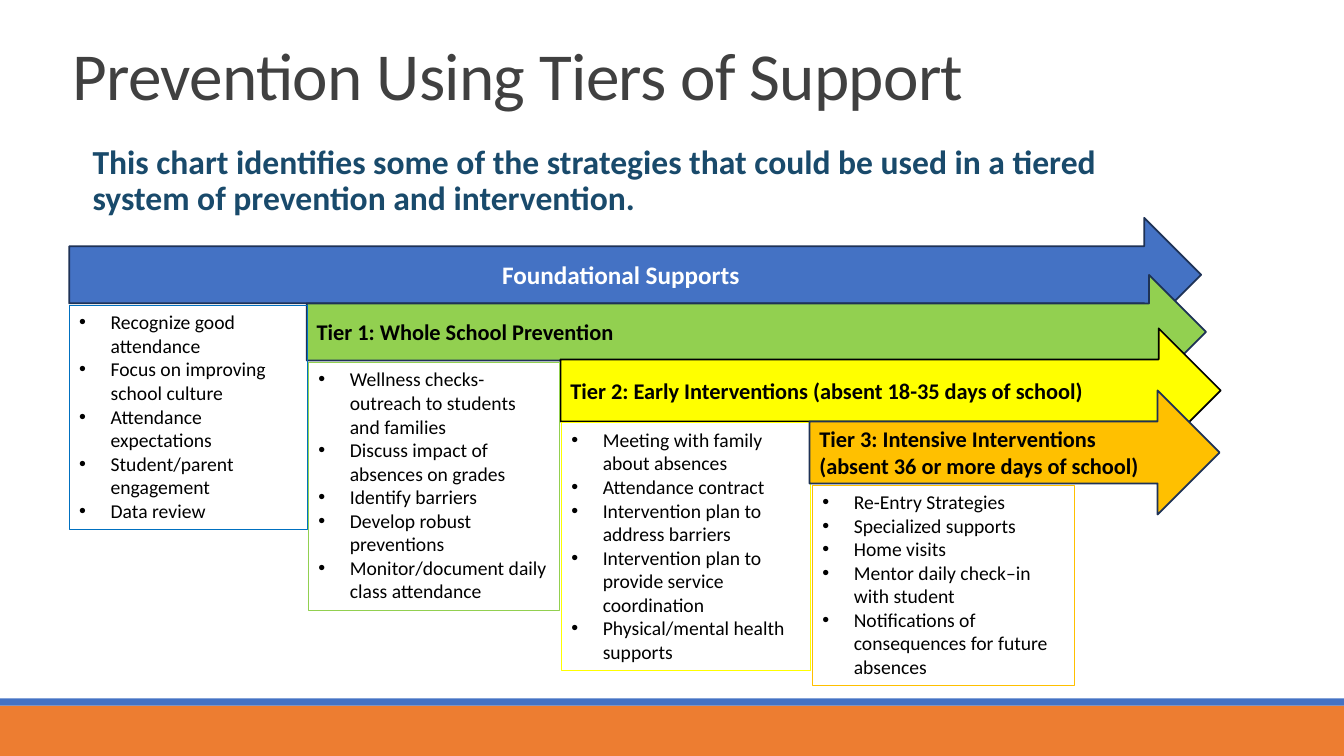
from lxml.etree import SubElement
from pptx import Presentation
from pptx.dml.color import RGBColor
from pptx.enum.shapes import MSO_SHAPE as Shape
from pptx.enum.text import MSO_ANCHOR as Anchor, MSO_AUTO_SIZE as AutoSize, PP_ALIGN as Align
from pptx.oxml.ns import qn
from pptx.util import Pt

TITLE = "Prevention Using Tiers of Support"
INTRO = ("This chart identifies some of the strategies that could be used in a tiered "
         "system of prevention and intervention.")
TIERS = [
    {"label": "Foundational Supports", "size": 18, "ink": "FFFFFF", "align": Align.CENTER,
     "fill": "4472C4", "edge": "1E3256", "border": "0070C0",
     "arrow": (49.4, 155.6, 808.6, 81.4), "box": (49.5, 218.1, 169.9, 159.9),
     "strategies": ["Recognize good attendance", "Focus on improving school culture",
                    "Attendance expectations", "Student/parent engagement", "Data review"]},
    {"label": "Tier 1: Whole School Prevention", "size": 16, "ink": "000000", "align": Align.LEFT,
     "fill": "92D050", "edge": "1E3256", "border": "92D050",
     "arrow": (219.1, 196.4, 642.4, 81.4), "box": (220.3, 258.9, 179.3, 177),
     "strategies": ["Wellness checks-outreach to students and families",
                    "Discuss impact of absences on grades", "Identify barriers",
                    "Develop robust preventions", "Monitor/document daily class attendance"]},
    {"label": "Tier 2: Early Interventions (absent 18-35 days of school)", "size": 16,
     "ink": "000000", "align": Align.LEFT,
     "fill": "FFFF00", "edge": "000000", "border": "FFFF00",
     "arrow": (400.3, 234.6, 471.6, 88.6), "box": (401, 302.1, 177.8, 177),
     "strategies": ["Meeting with family about absences", "Attendance contract",
                    "Intervention plan to address barriers",
                    "Intervention plan to provide service coordination",
                    "Physical/mental health supports"]},
    {"label": "Tier 3: Intensive Interventions\n(absent 36 or more days of school)", "size": 16,
     "ink": "000000", "align": Align.LEFT,
     "fill": "FFC000", "edge": "1E3256", "border": "FFC000",
     "arrow": (578.2, 278.9, 293, 88.6), "box": (580.3, 346.5, 187.2, 143.3),
     "strategies": ["Re-Entry Strategies", "Specialized supports", "Home visits",
                    "Mentor daily check–in with student",
                    "Notifications of consequences for future absences"]},
]
FOOTER = [((0, 504, 960, 36), "ED7D31"), ((0, 498.9, 960, 5.1), "4472C4")]
INDENT = 22.5


def color(value):
    return RGBColor.from_string(value)


def points(area):
    return [Pt(length) for length in area]


def write(frame, text, size, ink, bold=False, align=Align.LEFT, spacing=None, bullets=False):
    frame.word_wrap = True
    frame.text = text
    for paragraph in frame.paragraphs:
        paragraph.alignment = align
        if spacing:
            paragraph.line_spacing = spacing
        if bullets:
            properties = paragraph._p.get_or_add_pPr()
            properties.set("marL", str(Pt(INDENT)))
            properties.set("indent", str(-Pt(INDENT)))
            SubElement(properties, qn("a:buFont")).set("typeface", "Arial")
            SubElement(properties, qn("a:buChar")).set("char", "•")
        for run in paragraph.runs:
            run.font.name = "Calibri"
            run.font.size = Pt(size)
            run.font.bold = bold
            run.font.color.rgb = color(ink)


def add_block(slide, kind, area, fill=None, line=None, width=0):
    block = slide.shapes.add_shape(kind, *points(area))
    block.shadow.inherit = False
    if fill:
        block.fill.solid()
        block.fill.fore_color.rgb = color(fill)
    else:
        block.fill.background()
    if line:
        block.line.color.rgb = color(line)
        block.line.width = Pt(width)
    else:
        block.line.fill.background()
    return block


def add_tier_arrow(slide, tier):
    arrow = add_block(slide, Shape.RIGHT_ARROW, tier["arrow"], tier["fill"], tier["edge"], 1.25)
    arrow.text_frame.vertical_anchor = Anchor.MIDDLE
    write(arrow.text_frame, tier["label"], tier["size"], tier["ink"], True, tier["align"])


def add_strategies(slide, tier):
    box = add_block(slide, Shape.RECTANGLE, tier["box"], line=tier["border"], width=0.75)
    box.text_frame.vertical_anchor = Anchor.TOP
    write(box.text_frame, "\n".join(tier["strategies"]), 14, "000000", bullets=True)
    box.text_frame.auto_size = AutoSize.SHAPE_TO_FIT_TEXT


def main():
    deck = Presentation()
    deck.slide_width, deck.slide_height = Pt(960), Pt(540)
    slide = deck.slides.add_slide(deck.slide_layouts[5])

    for area, fill in FOOTER:
        add_block(slide, Shape.RECTANGLE, area, fill)

    title = slide.shapes.title
    title.left, title.top, title.width, title.height = points((44.6, 33.1, 785.5, 51.8))
    write(title.text_frame, TITLE, 48, "404040", spacing=0.85)
    title.text_frame.vertical_anchor = Anchor.BOTTOM
    title.text_frame.auto_size = AutoSize.NONE
    title.text_frame.paragraphs[0].runs[0].font._element.set("spc", "-50")

    *wide_tiers, last_tier = TIERS
    for tier in wide_tiers:
        add_tier_arrow(slide, tier)
    for tier in TIERS:
        add_strategies(slide, tier)
    add_tier_arrow(slide, last_tier)

    intro = slide.shapes.add_textbox(*points((59, 103.7, 785.5, 51.8)))
    intro.text_frame.vertical_anchor = Anchor.MIDDLE
    write(intro.text_frame, INTRO, 24, "194A6B", True, spacing=0.9)

    deck.save("out.pptx")


if __name__ == "__main__":
    main()
